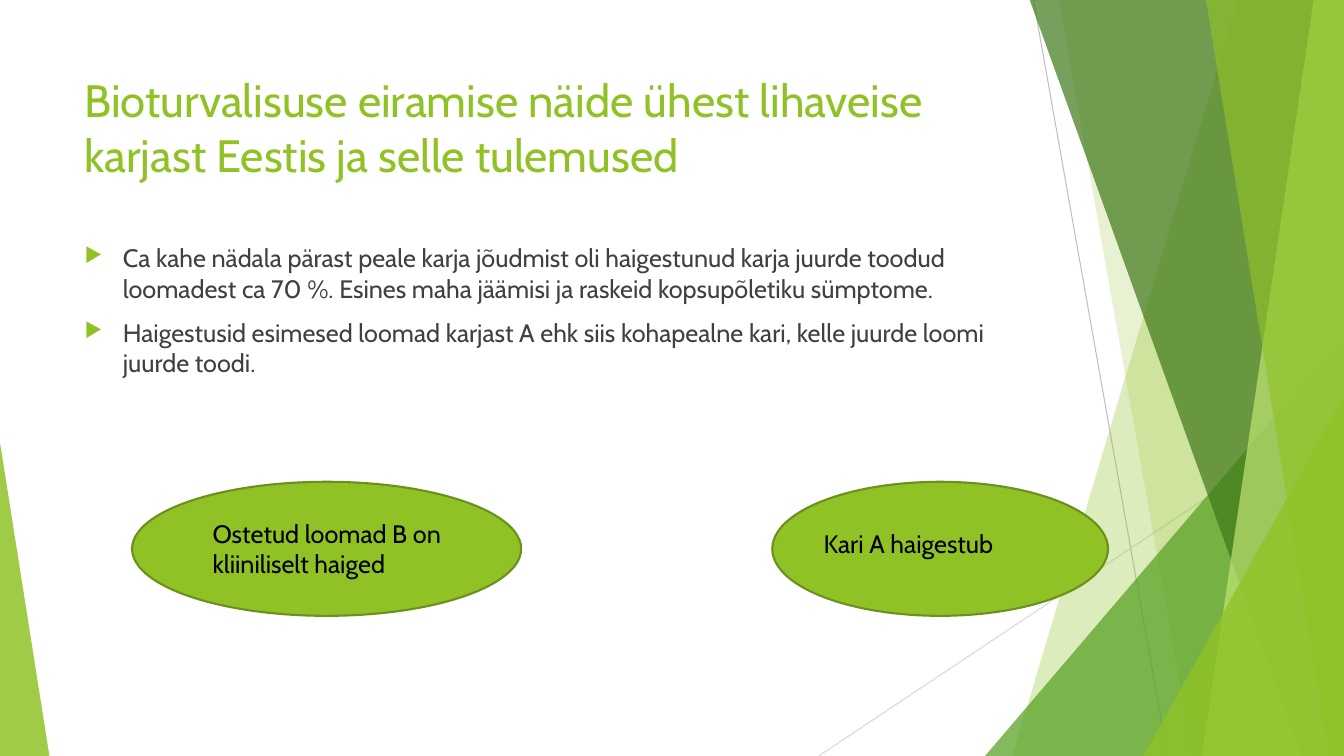
from lxml import etree
from pptx import Presentation
from pptx.dml.color import RGBColor
from pptx.enum.shapes import MSO_CONNECTOR, MSO_SHAPE
from pptx.enum.text import MSO_ANCHOR
from pptx.oxml.ns import qn
from pptx.util import Inches, Pt

STRAIGHT = MSO_CONNECTOR.STRAIGHT
TRIANGLE = MSO_SHAPE.ISOSCELES_TRIANGLE
OVAL = MSO_SHAPE.OVAL
TOP = MSO_ANCHOR.TOP

WIDTH, HEIGHT = 13.33, 7.5
FONT = "Cabin"
COLORS = {
    "lime": "90C226", "green": "54A021", "forest": "3F7819", "pale": "C0E474",
    "outline": "6B901C", "gray": "BFBFBF", "light_gray": "D9D9D9",
    "body": "404040", "black": "000000",
}

TITLE = "Bioturvalisuse eiramise näide ühest lihaveise karjast Eestis ja selle tulemused"
BULLETS = [
    "Ca kahe nädala pärast peale karja jõudmist oli haigestunud karja juurde toodud "
    "loomadest ca 70 %. Esines maha jäämisi ja raskeid kopsupõletiku sümptome.",
    "Haigestusid esimesed loomad karjast A ehk siis kohapealne kari, kelle juurde "
    "loomi juurde toodi.",
]
HERDS = [
    {"text": "Ostetud loomad B on kliiniliselt haiged",
     "oval": (1.31, 4.78, 3.86, 1.33), "label": (2.01, 5.09, 2.68, 0.71)},
    {"text": "Kari A haigestub",
     "oval": (7.66, 4.78, 3.33, 1.33), "label": (8.07, 5.19, 2.62, 0.4)},
]
THIN_LINES = [
    ((10.25, 0, 11.58, HEIGHT), "gray"),
    ((WIDTH, 4.03, 8.12, HEIGHT), "light_gray"),
]
FACETS = [
    {"kind": "band", "top": 12.28, "bottom": 10.04, "color": "lime", "alpha": 30},
    {"kind": "band", "top": 10.5, "bottom": 11.83, "color": "lime", "alpha": 20},
    {"kind": "triangle", "box": (9.77, 3.33, 3.56, 4.17), "apex": 1, "color": "green", "alpha": 72},
    {"kind": "band", "top": 10.21, "bottom": 12.91, "color": "forest", "alpha": 70},
    {"kind": "band", "top": 13.03, "bottom": 11.92, "color": "pale", "alpha": 70},
    {"kind": "band", "top": 11.96, "bottom": 13.18, "color": "lime", "alpha": 65},
    {"kind": "triangle", "box": (11.34, 3.93, 1.99, 3.57), "apex": 1, "color": "lime", "alpha": 80},
    {"kind": "triangle", "box": (0, 4.39, 0.49, 3.11), "apex": 0, "color": "lime", "alpha": 85},
]


def rgb(name):
    return RGBColor.from_string(COLORS[name])


def inches(values):
    return [Inches(value) for value in values]


def add_thin_line(slide, ends, color):
    line = slide.shapes.add_connector(STRAIGHT, *inches(ends))
    line.line.color.rgb = rgb(color)
    line.line.width = Pt(0.75)
    etree.SubElement(line._element.spPr, qn("a:effectLst"))


def add_facet(slide, facet):
    if facet["kind"] == "band":
        top, bottom = facet["top"], facet["bottom"]
        corners = [(top, -0.01), (WIDTH, -0.01), (WIDTH, HEIGHT), (bottom, HEIGHT)]
        points = [inches(corner) for corner in corners]
        builder = slide.shapes.build_freeform(*points[0])
        builder.add_line_segments(points[1:], close=True)
        shape = builder.convert_to_shape()
    else:
        shape = slide.shapes.add_shape(TRIANGLE, *inches(facet["box"]))
        shape.adjustments[0] = facet["apex"]
    shape.shadow.inherit = False
    shape.line.fill.background()
    shape.fill.solid()
    shape.fill.fore_color.rgb = rgb(facet["color"])
    color = shape._element.spPr.find(qn("a:solidFill"))[0]
    etree.SubElement(color, qn("a:alpha"), val=str(facet["alpha"] * 1000))


def add_oval(slide, box):
    shape = slide.shapes.add_shape(OVAL, *inches(box))
    shape.shadow.inherit = False
    shape.fill.solid()
    shape.fill.fore_color.rgb = rgb("lime")
    shape.line.color.rgb = rgb("outline")
    shape.line.width = Pt(1.5)


def add_text(slide, box, texts, size, color):
    frame = slide.shapes.add_textbox(*inches(box)).text_frame
    frame.word_wrap = True
    frame.vertical_anchor = TOP
    for index, text in enumerate(texts):
        paragraph = frame.add_paragraph() if index else frame.paragraphs[0]
        run = paragraph.add_run()
        run.text = text
        for name, value in {"name": FONT, "size": Pt(size)}.items():
            setattr(run.font, name, value)
        run.font.color.rgb = rgb(color)
    return frame


def add_bullet(paragraph):
    paragraph.space_before = Pt(10)
    properties = paragraph._p.get_or_add_pPr()
    properties.set("marL", str(Inches(0.38)))
    properties.set("indent", str(Inches(-0.38)))
    bullet_color = etree.SubElement(properties, qn("a:buClr"))
    etree.SubElement(bullet_color, qn("a:srgbClr"), val=COLORS["lime"])
    etree.SubElement(properties, qn("a:buSzPct"), val="80000")
    etree.SubElement(properties, qn("a:buChar"), char="▶")


def main():
    presentation = Presentation()
    presentation.slide_width = Inches(WIDTH)
    presentation.slide_height = Inches(HEIGHT)
    slide = presentation.slides.add_slide(presentation.slide_layouts[6])
    for ends, color in THIN_LINES:
        add_thin_line(slide, ends, color)
    for facet in FACETS:
        add_facet(slide, facet)
    add_text(slide, (0.74, 0.67, 9.4, 1.44), [TITLE], 32.4, "lime")
    body = add_text(slide, (0.74, 2.36, 9.4, 4.24), BULLETS, 18, "body")
    for paragraph in body.paragraphs:
        add_bullet(paragraph)
    for herd in HERDS:
        add_oval(slide, herd["oval"])
        add_text(slide, herd["label"], [herd["text"]], 18, "black")
    presentation.save("out.pptx")


if __name__ == "__main__":
    main()
